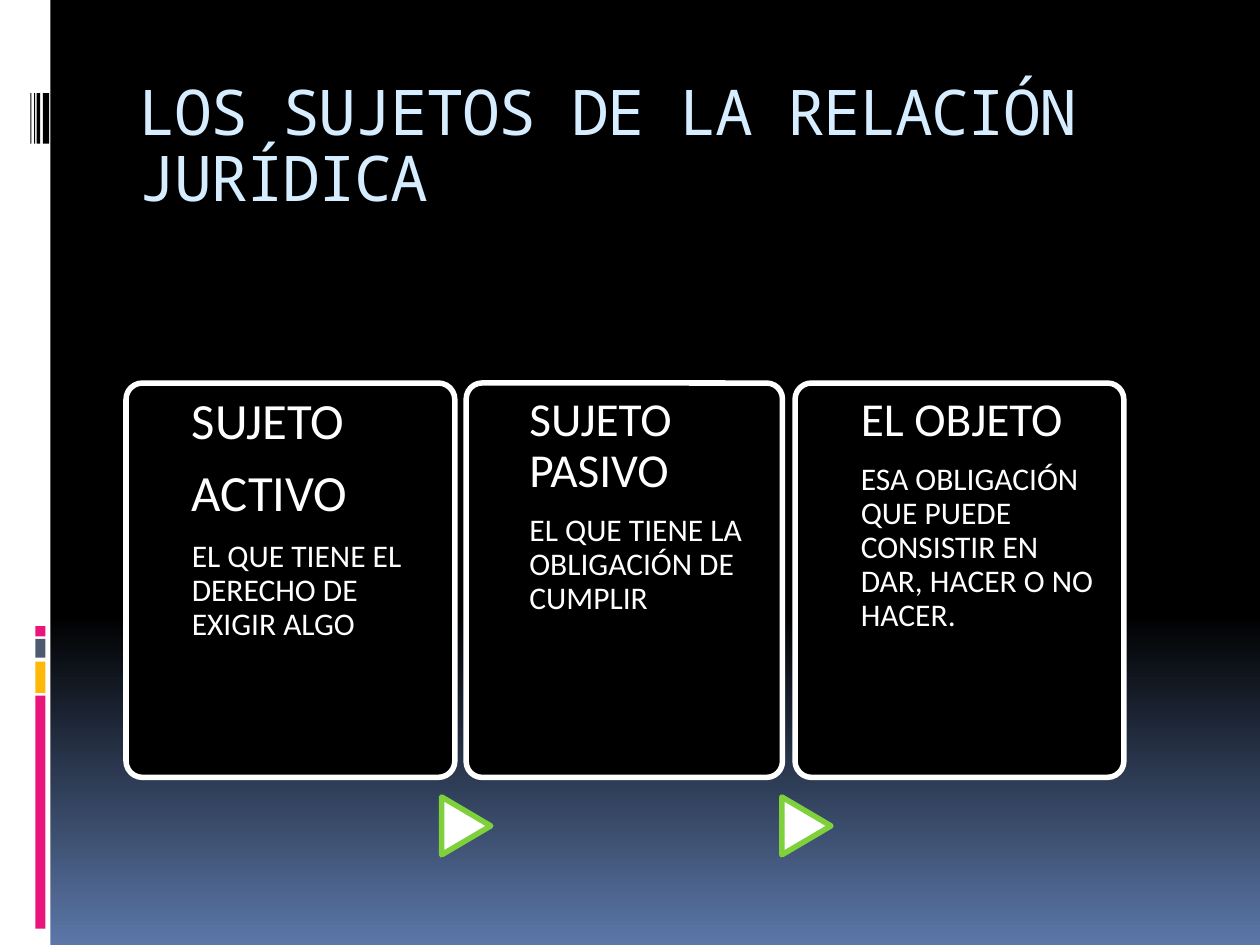
from pptx import Presentation
from pptx.dml.color import RGBColor
from pptx.enum.shapes import MSO_SHAPE
from pptx.enum.text import MSO_ANCHOR, PP_ALIGN
from pptx.util import Inches, Pt

RECT = MSO_SHAPE.RECTANGLE
ROUND = MSO_SHAPE.ROUNDED_RECTANGLE
ARROW = MSO_SHAPE.FLOWCHART_EXTRACT
TOP = MSO_ANCHOR.TOP
LEFT = PP_ALIGN.LEFT

CARDS = [
    (1, 2.61, 29, ["SUJETO", "ACTIVO"], "EL QUE TIENE EL DERECHO DE EXIGIR ALGO"),
    (3.7, 2.51, 27, ["SUJETO PASIVO"], "EL QUE TIENE LA OBLIGACIÓN DE CUMPLIR"),
    (6.31, 2.61, 27, ["EL OBJETO"],
     "ESA OBLIGACIÓN QUE PUEDE CONSISTIR EN DAR, HACER O NO HACER."),
]
BLOCKS = [(4.97, 0.08, "EA157A"), (5.07, 0.15, "4E5B6F"),
          (5.25, 0.25, "FEB80A"), (5.52, 1.85, "EA157A")]
STRIPES = [(0.24, 0.01), (0.27, 0.01), (0.29, 0.03), (0.34, 0.05)]


def color(code):
    return RGBColor.from_string(code)


def add_shape(slide, kind, box, fill, line=None):
    shape = slide.shapes.add_shape(kind, *map(Inches, box))
    shape.shadow.inherit = False
    shape.fill.solid()
    shape.fill.fore_color.rgb = color(fill)
    if line:
        shape.line.color.rgb = color(line)
        shape.line.width = Pt(3.15)
    else:
        shape.line.fill.background()
    return shape


def style(para, font, size, code):
    for run in para.runs:
        run.font.name = font
        run.font.size = Pt(size)
        run.font.color.rgb = color(code)


def add_back(slide):
    fill = slide.background.fill
    fill.gradient()
    fill.gradient_angle = 270
    stops = zip(fill.gradient_stops, (0.65, 1), ("000000", "5B77A8"))
    for stop, place, code in stops:
        stop.position = place
        stop.color.rgb = color(code)


def add_side(slide, left, top, width, height):
    add_shape(slide, RECT, (left, top, width, height), "FFFFFF")
    for y, tall, code in BLOCKS:
        add_shape(slide, RECT, (left + 0.28, top + y, 0.08, tall), code)
    for x, wide in STRIPES:
        add_shape(slide, RECT, (left + x, top + 0.74, wide, 0.4), "000000")


def add_title(slide, left, top, width, height):
    title = slide.shapes.title
    title.left, title.top = Inches(left), Inches(top)
    title.width, title.height = Inches(width), Inches(height)
    frame = title.text_frame
    frame.text = "LOS SUJETOS DE LA RELACIÓN JURÍDICA"
    frame.vertical_anchor = TOP
    frame.margin_top = Inches(0.09)
    para = frame.paragraphs[0]
    para.alignment = LEFT
    para.line_spacing = 0.88
    style(para, "Noto Sans Mono", 36, "D6ECFF")
    para.runs[0]._r.get_or_add_rPr().set("spc", "-100")


def add_card(slide, left, top, width, height, size, heads, body):
    card = add_shape(slide, ROUND, (left, top, width, height), "000000", "FFFFFF")
    card.adjustments[0] = 0.05
    inset = width * 0.2
    box = (left + inset, top, width * 0.745, height)
    frame = slide.shapes.add_textbox(*map(Inches, box)).text_frame
    frame.word_wrap = True
    frame.margin_left = frame.margin_right = frame.margin_bottom = 0
    frame.margin_top = Inches(0.1)
    frame.text = "\n".join(heads + [body])
    sizes = [size] * len(heads) + [18]
    for para, points in zip(frame.paragraphs, sizes):
        para.line_spacing = 0.9
        para.space_after = Pt(round(points * 0.35, 1))
        style(para, "Calibri", points, "FFFFFF")


def add_arrow(slide, left, top, width, height):
    arrow = add_shape(slide, ARROW, (left, top, width, height), "FFFFFF", "7FD13B")
    arrow.rotation = 90


def main():
    deck = Presentation()
    deck.slide_width, deck.slide_height = Inches(10), Inches(7.5)
    slide = deck.slides.add_slide(deck.slide_layouts[5])
    add_back(slide)
    add_side(slide, 0, 0, 0.4, 7.5)
    add_title(slide, 1, 0.56, 8.5, 1)
    for left, width, size, heads, body in CARDS:
        add_card(slide, left, 3.04, width, 3.13, size, heads, body)
    for left in (3.47, 6.17):
        add_arrow(slide, left, 6.36, 0.46, 0.39)
    deck.save("out.pptx")


if __name__ == "__main__":
    main()
